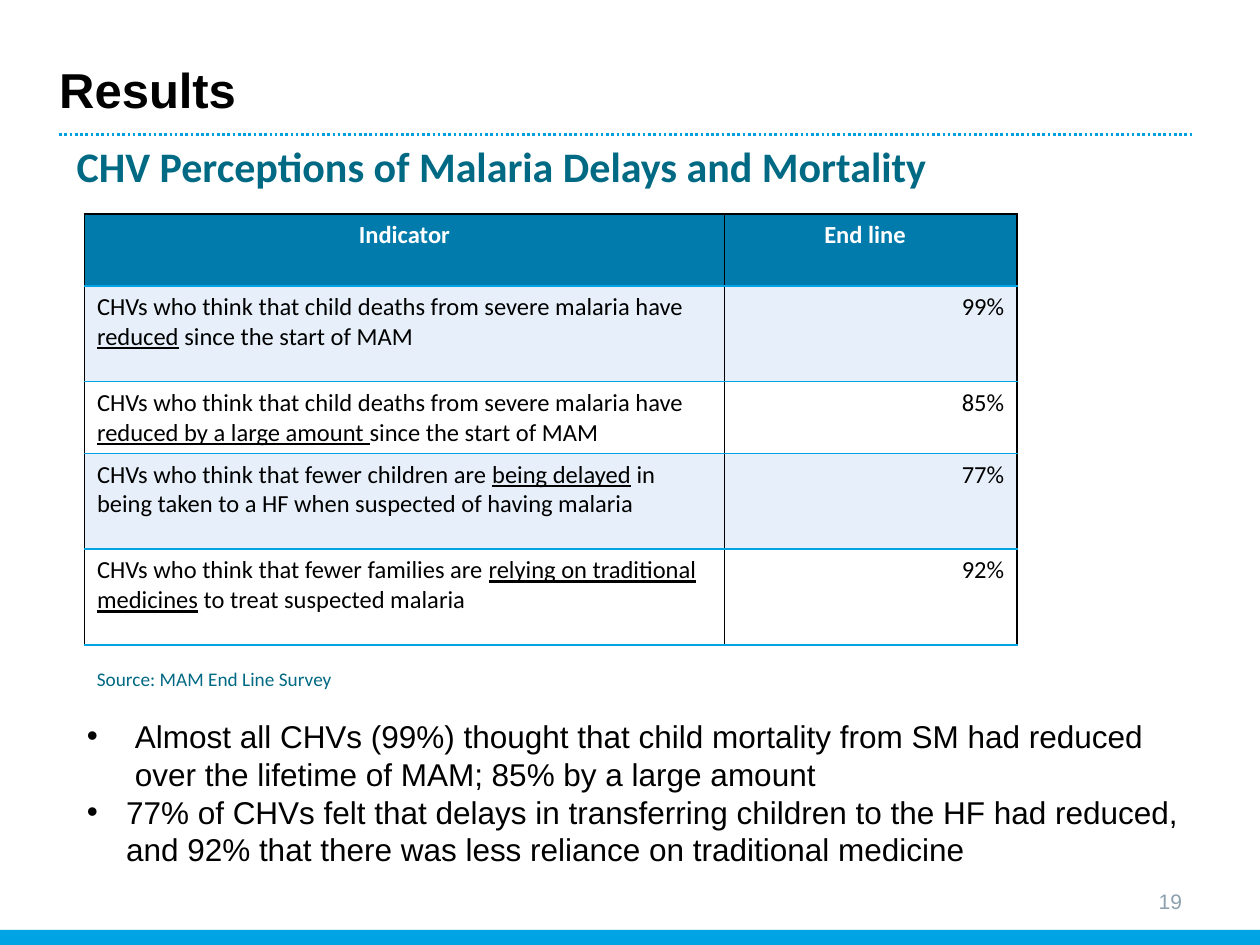
import lxml.etree
import pptx
import pptx.dml.color
import pptx.enum.shapes
import pptx.enum.text
import pptx.oxml
import pptx.oxml.ns
import pptx.util

Inches = pptx.util.Inches
Pt = pptx.util.Pt
ALIGN = pptx.enum.text.PP_ALIGN
ANCHOR = pptx.enum.text.MSO_ANCHOR
qn = pptx.oxml.ns.qn

COLORS = {
    "black": "000000", "white": "FFFFFF", "bar": "00A4E4", "rule": "00A0DF",
    "header": "007BAB", "band": "E7F0FA", "teal": "006983", "number": "8CA1AD",
}

# Each indicator: text before, underlined text, text after, value
INDICATORS = [
    ("CHVs who think that child deaths from severe malaria have ", "reduced",
     " since the start of MAM", "99%"),
    ("CHVs who think that child deaths from severe malaria have ",
     "reduced by a large amount ", "since the start of MAM", "85%"),
    ("CHVs who think that fewer children are ", "being delayed",
     " in being taken to a HF when suspected of having malaria", "77%"),
    ("CHVs who think that fewer families are ", "relying on traditional medicines",
     " to treat suspected malaria", "92%"),
]

# Each bullet: text, hanging indent in inches
BULLETS = [
    ("Almost all CHVs (99%) thought that child mortality from SM had reduced "
     "over the lifetime of MAM; 85% by a large amount", 0.38),
    ("77% of CHVs felt that delays in transferring children to the HF had reduced, "
     "and 92% that there was less reliance on traditional medicine", 0.31),
]


def rgb(name):
    return pptx.dml.color.RGBColor.from_string(COLORS[name])


def write(paragraph, text, size=14, font="Calibri", color="black", bold=False,
          underline=False, align=ALIGN.LEFT):
    paragraph.alignment = align
    run = paragraph.add_run()
    run.text = text
    run.font.size = Pt(size)
    run.font.name = font
    run.font.color.rgb = rgb(color)
    run.font.bold = bold
    run.font.underline = underline


def place(shape, left, top, width, height):
    shape.left, shape.top = Inches(left), Inches(top)
    shape.width, shape.height = Inches(width), Inches(height)


def add_text(slide, box, text, anchor=ANCHOR.TOP, **text_format):
    shape = slide.shapes.add_textbox(*map(Inches, box))
    shape.text_frame.word_wrap = True
    shape.text_frame.vertical_anchor = anchor
    write(shape.text_frame.paragraphs[0], text, **text_format)


def add_bar(slide, box, color):
    shape = slide.shapes.add_shape(
        pptx.enum.shapes.MSO_SHAPE.RECTANGLE, *map(Inches, box))
    shape.shadow.inherit = False
    shape.fill.solid()
    shape.fill.fore_color.rgb = rgb(color)
    shape.line.fill.background()


def add_dotted_rule(slide, left, right, top):
    rule = slide.shapes.add_connector(
        pptx.enum.shapes.MSO_CONNECTOR.STRAIGHT,
        Inches(left), Inches(top), Inches(right), Inches(top))
    rule.line.color.rgb = rgb("rule")
    rule.line.width = Pt(1.5)
    rule.line.dash_style = pptx.enum.dml.MSO_LINE.ROUND_DOT
    lxml.etree.SubElement(rule._element.spPr, qn("a:effectLst"))


def fill_title(slide, text):
    title = slide.shapes.title
    place(title, 0.47, 0.39, 9.01, 0.63)
    frame = title.text_frame
    frame.margin_left = frame.margin_right = 0
    frame.vertical_anchor = ANCHOR.MIDDLE
    write(frame.paragraphs[0], text, size=28, font="Arial", bold=True)


def fill_bullets(slide, bullets):
    body = slide.placeholders[1]
    place(body, 0.59, 5.64, 9.06, 1.31)
    frame = body.text_frame
    frame.auto_size = pptx.enum.text.MSO_AUTO_SIZE.NONE
    for index, (text, indent) in enumerate(bullets):
        paragraph = frame.add_paragraph() if index else frame.paragraphs[0]
        paragraph.space_before = Pt(0)
        write(paragraph, text, size=18, font="Arial")
        properties = paragraph._p.get_or_add_pPr()
        properties.set("marL", str(Inches(indent)))
        properties.set("indent", str(-Inches(indent)))
        lxml.etree.SubElement(properties, qn("a:buFont")).set("typeface", "Arial")
        lxml.etree.SubElement(properties, qn("a:buChar")).set("char", "•")


def format_cell(cell, fill, top_color):
    cell.fill.solid()
    cell.fill.fore_color.rgb = rgb(fill)
    borders = {"lnL": "black", "lnR": "black", "lnT": top_color, "lnB": "bar"}
    properties = cell._tc.get_or_add_tcPr()
    for index, (side, color) in enumerate(borders.items()):
        line = lxml.etree.Element(qn("a:" + side), w=str(Pt(1)))
        solid = lxml.etree.SubElement(line, qn("a:solidFill"))
        lxml.etree.SubElement(solid, qn("a:srgbClr")).set("val", COLORS[color])
        properties.insert(index, line)


def add_indicator_table(slide, indicators):
    frame = slide.shapes.add_table(
        len(indicators) + 1, 2, Inches(0.67), Inches(1.7), Inches(7.4), Inches(3.43))
    table = frame.table
    for column, width in zip(table.columns, (5.08, 2.32)):
        column.width = Inches(width)
    for row, height in zip(table.rows, (0.57, 0.76, 0.57, 0.76, 0.76)):
        row.height = Inches(height)

    # Header row
    for column, heading in enumerate(("Indicator", "End line  ")):
        cell = table.cell(0, column)
        format_cell(cell, "header", "black")
        write(cell.text_frame.paragraphs[0], heading, color="white", bold=True,
              align=ALIGN.CENTER)

    # Banded indicator rows
    for row, (before, marked, after, value) in enumerate(indicators, start=1):
        label, result = table.cell(row, 0), table.cell(row, 1)
        for cell in (label, result):
            format_cell(cell, "band" if row % 2 else "white", "bar")
        paragraph = label.text_frame.paragraphs[0]
        write(paragraph, before)
        write(paragraph, marked, underline=True)
        write(paragraph, after)
        write(result.text_frame.paragraphs[0], value, align=ALIGN.RIGHT)


def main():
    presentation = pptx.Presentation()
    presentation.slide_width, presentation.slide_height = Inches(10), Inches(7.5)
    slide = presentation.slides.add_slide(presentation.slide_layouts[1])

    # Frame of the page
    add_bar(slide, (0, 7.38, 10, 0.12), "bar")
    add_dotted_rule(slide, 0.47, 9.48, 1.07)
    add_text(slide, (7.15, 6.95, 2.33, 0.4), "19", anchor=ANCHOR.MIDDLE,
             size=12, font="Arial", color="number", align=ALIGN.RIGHT)

    # Content
    fill_title(slide, "Results")
    fill_bullets(slide, BULLETS)
    add_indicator_table(slide, INDICATORS)
    add_text(slide, (0.67, 5.25, 4.88, 0.29), "Source: MAM End Line Survey",
             size=11, color="teal")
    add_text(slide, (0.51, 1.07, 7.56, 0.5),
             "CHV Perceptions of Malaria Delays and Mortality",
             size=24, color="teal", bold=True)

    presentation.save("out.pptx")


if __name__ == "__main__":
    main()
